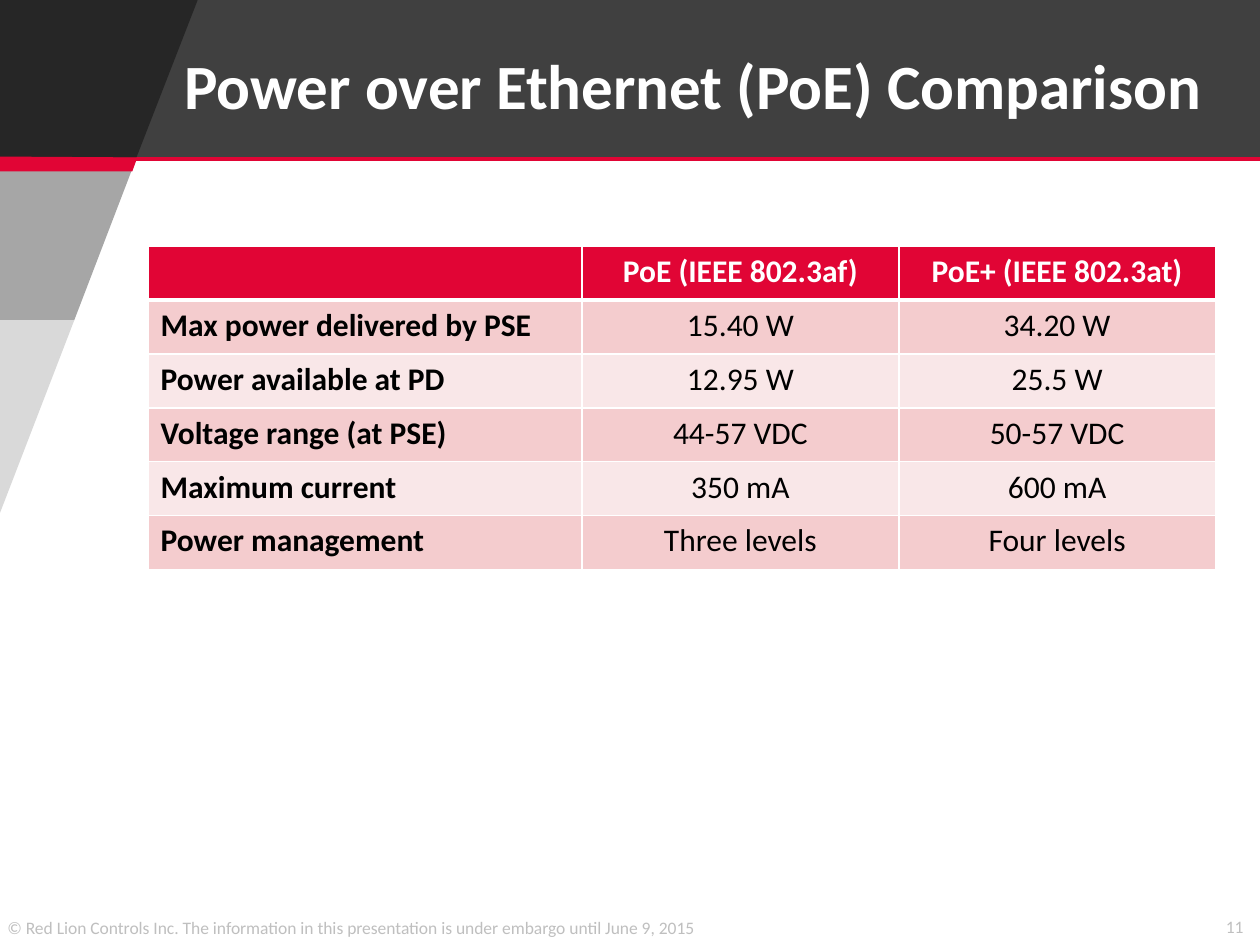
from lxml.etree import SubElement
from pptx import Presentation
from pptx.dml.color import RGBColor
from pptx.enum.shapes import MSO_CONNECTOR, MSO_SHAPE
from pptx.enum.text import PP_ALIGN
from pptx.oxml.ns import qn
from pptx.util import Pt

COLORS = {
    "white": "FFFFFF", "black": "000000", "red": "E10535", "charcoal": "404040",
    "corner": "262626", "gray": "A6A6A6", "pale": "D9D9D9", "footer": "BFBFBF",
    "odd": "F4CCCE", "even": "F9E7E8",
}
COMPARISON = [
    ("", "PoE (IEEE 802.3af)", "PoE+ (IEEE 802.3at)"),
    ("Max power delivered by PSE", "15.40 W", "34.20 W"),
    ("Power available at PD", "12.95 W", "25.5 W"),
    ("Voltage range (at PSE)", "44-57 VDC", "50-57 VDC"),
    ("Maximum current", "350 mA", "600 mA"),
    ("Power management", "Three levels", "Four levels"),
]


def rgb(name):
    """Return the named palette colour."""
    return RGBColor.from_string(COLORS[name])


def paint(shape, color):
    """Give a shape a flat fill without outline or shadow."""
    shape.shadow.inherit = False
    shape.fill.solid()
    shape.fill.fore_color.rgb = rgb(color)
    shape.line.fill.background()


def style(paragraph, size, color, bold=False, align=PP_ALIGN.LEFT):
    """Set the font and alignment of a paragraph."""
    paragraph.alignment = align
    font = paragraph.font
    font.name, font.size, font.bold = "Calibri", Pt(size), bold
    font.color.rgb = rgb(color)


def add_label(slide, box, text, size, color, wrap=False, **looks):
    """Place one line of text in a box."""
    frame = slide.shapes.add_textbox(*map(Pt, box)).text_frame
    frame.word_wrap = wrap
    frame.text = text
    style(frame.paragraphs[0], size, color, **looks)


def add_band(slide, left, top, points, color):
    """Draw a slanted band from points relative to its corner."""
    corners = [(Pt(left + x), Pt(top + y)) for x, y in points]
    builder = slide.shapes.build_freeform(*corners[0])
    builder.add_line_segments(corners[1:], close=True)
    paint(builder.convert_to_shape(), color)


def add_header(slide, left, top, width, height):
    """Draw the title bar with its rule and the slanted side bands."""
    rule_y = top + height + 0.7
    add_band(slide, left, rule_y + 2.2, [(0, 0), (77, 0), (42.5, 90), (0, 90)], "gray")
    bar = slide.shapes.add_shape(MSO_SHAPE.RECTANGLE, Pt(left), Pt(top), Pt(width), Pt(height))
    paint(bar, "charcoal")

    rule = slide.shapes.add_connector(
        MSO_CONNECTOR.STRAIGHT, Pt(left + width), Pt(rule_y), Pt(left), Pt(rule_y))
    rule.line.color.rgb = rgb("red")
    rule.line.width = Pt(2.5)
    SubElement(rule._element.spPr, qn("a:effectLst"))

    tail_width, tail_height = 42.5, 110.2
    tail_top = top + height + 92.9
    tail = slide.shapes.add_shape(
        MSO_SHAPE.RIGHT_TRIANGLE,
        Pt(left + (tail_width - tail_height) / 2),
        Pt(tail_top + (tail_height - tail_width) / 2),
        Pt(tail_height), Pt(tail_width))
    tail.rotation = 90
    paint(tail, "pale")

    add_band(slide, left, top, [(0, 0), (113, 0), (78, height), (0, height)], "corner")
    add_band(slide, left, top + height - 0.5, [(0, 0), (78.5, 0.5), (75.6, 8.5), (0, 8.5)], "red")
    add_label(slide, (left + 72, top + 23, width - 72, 90),
              "Power over Ethernet (PoE) Comparison", 36, "white",
              wrap=True, bold=True, align=PP_ALIGN.CENTER)


def add_borders(cell, **widths):
    """Draw white borders of the given widths on a cell."""
    for side in ("L", "R", "T", "B"):
        line = SubElement(cell._tc.get_or_add_tcPr(), qn(f"a:ln{side}"), w=str(Pt(widths.get(side, 1))))
        fill = SubElement(line, qn("a:solidFill"))
        SubElement(fill, qn("a:srgbClr"), val=COLORS["white"])


def add_comparison(slide, left, top, width, height):
    """Build the table comparing the two standards."""
    rows, columns = len(COMPARISON), len(COMPARISON[0])
    table = slide.shapes.add_table(
        rows, columns, Pt(left), Pt(top), Pt(width), Pt(height)).table
    label_width = 248
    for index, column in enumerate(table.columns):
        column.width = Pt((width - label_width) / (columns - 1) if index else label_width)
    for r, values in enumerate(COMPARISON):
        table.rows[r].height = Pt(height / rows)
        fill = "red" if r == 0 else "odd" if r % 2 else "even"
        for c, value in enumerate(values):
            cell = table.cell(r, c)
            add_borders(cell, T=3 if r == 1 else 1, B=3 if r == 0 else 1)
            cell.fill.solid()
            cell.fill.fore_color.rgb = rgb(fill)
            cell.text = value
            style(cell.text_frame.paragraphs[0], 18, "black" if r else "white",
                  bold=r == 0 or c == 0, align=PP_ALIGN.CENTER if c else PP_ALIGN.LEFT)


def add_footer(slide, left, top, width, height):
    """Place the copyright line and the page number."""
    number_width = 26.6
    add_label(slide, (left + width - number_width, top, number_width, height), "11", 10, "footer")
    add_label(slide, (left - 2.9, top + 0.5, 414, height),
              "© Red Lion Controls Inc. The information in this presentation is under embargo until June 9, 2015",
              10, "footer")


def main():
    """Build and save the slide."""
    deck = Presentation()
    deck.slide_width, deck.slide_height = Pt(720), Pt(540)
    slide = deck.slides.add_slide(deck.slide_layouts[6])
    add_footer(slide, 0, 520, 720, 19.4)
    add_header(slide, 0, 0, 720, 90)
    add_comparison(slide, 84.6, 140.6, 610, 185)
    deck.save("out.pptx")


if __name__ == "__main__":
    main()
